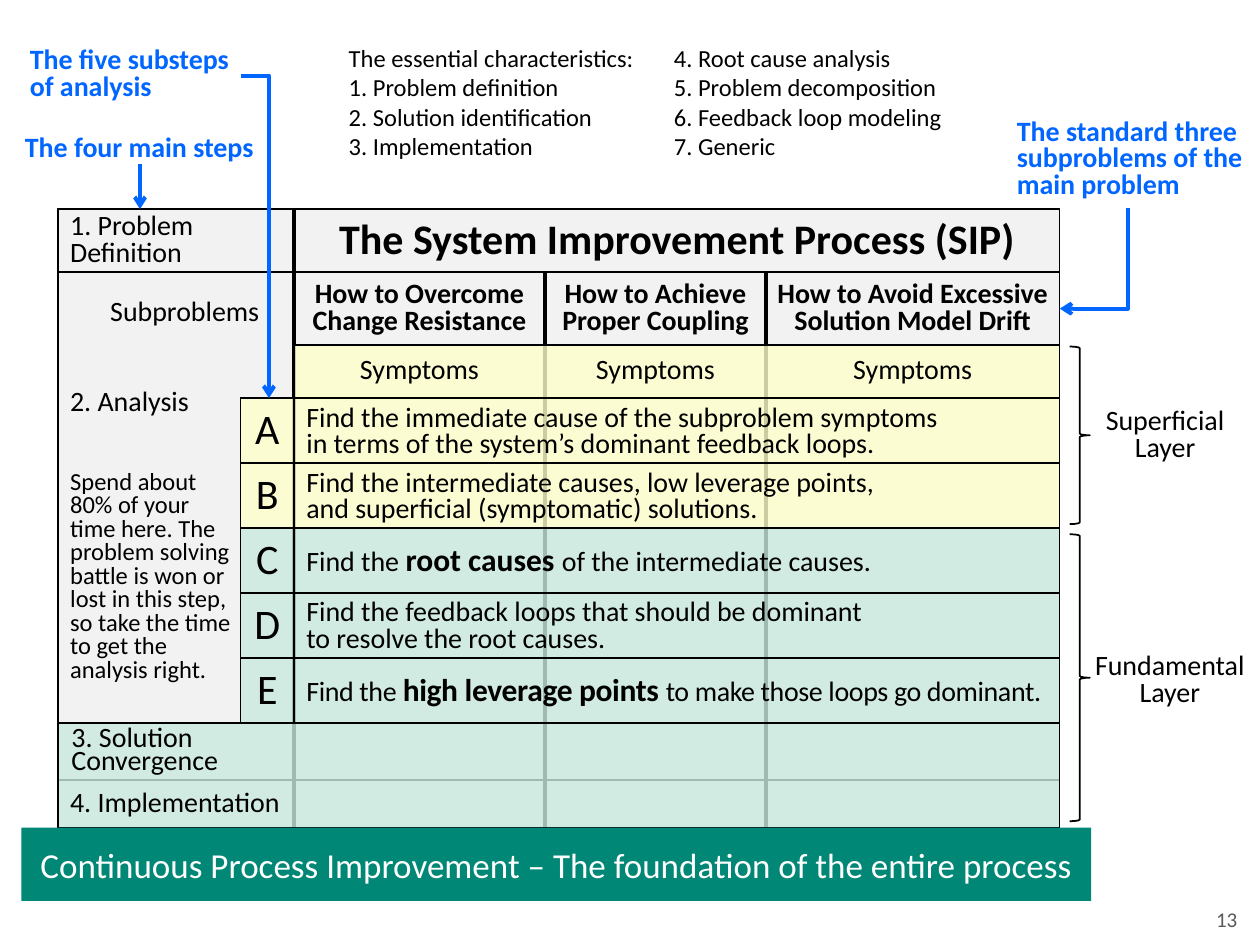
from dataclasses import dataclass

from lxml import etree
from pptx import Presentation
from pptx.dml.color import RGBColor
from pptx.enum.shapes import MSO_CONNECTOR, MSO_SHAPE
from pptx.enum.text import MSO_ANCHOR, MSO_AUTO_SIZE, PP_ALIGN
from pptx.oxml.ns import qn
from pptx.util import Pt

FONT = "Calibri"
BLACK, BLUE, WHITE = "000000", "0066FF", "FFFFFF"
GREY, GREEN, YELLOW, TEAL = "F2F2F2", "C9E9DE", "FFFFCC", "008776"
LEFT, MIDDLE, RIGHT = PP_ALIGN.LEFT, PP_ALIGN.CENTER, PP_ALIGN.RIGHT

# Grid of the process table
X0, X_STEP, X1, X_END = 33, 137.5, 168, 605.5
Y0, Y_HEAD, Y_SYMPTOM, Y_STEP, Y_SOLUTION, Y_IMPLEMENT, Y_END = (
    119.5, 155.5, 197.3, 227.5, 413, 445.7, 473)
STEP_H = (Y_SOLUTION - Y_STEP) / 5
Y_FUNDAMENTAL = Y_STEP + 2 * STEP_H

LABEL_INSETS = (7.2, 3.6, 0, 3.6)
STEP_INSETS = (7.2, 3.6, 3.6, 1.4)


@dataclass
class Box:
    left: float
    top: float
    width: float
    height: float

    def lengths(self):
        return [Pt(v) for v in (self.left, self.top, self.width, self.height)]


@dataclass
class Column:
    left: float
    right: float
    heading: str


@dataclass
class Step:
    letter: str
    text: str
    spc: float = 0


@dataclass
class Note:
    text: str
    box: Box
    size: float = 16
    align: PP_ALIGN = LEFT
    spacing: float = 0.8
    color: str = BLACK
    bold: bool = False
    insets: tuple = LABEL_INSETS
    anchor: MSO_ANCHOR = MSO_ANCHOR.MIDDLE


@dataclass
class Layer:
    text: str
    box: Box
    brace: Box


COLUMNS = [
    Column(X1, 311.5, "How to Overcome\vChange Resistance"),
    Column(311.5, 437.7, "How to Achieve\vProper Coupling"),
    Column(437.7, X_END, "How to Avoid Excessive\vSolution Model Drift"),
]
# **...** marks the larger bold words
STEPS = [
    Step("A", "Find the immediate cause of the subproblem symptoms\n"
              "in terms of the system’s dominant feedback loops."),
    Step("B", "Find the intermediate causes, low leverage points,\v"
              "and superficial (symptomatic) solutions."),
    Step("C", "Find the **root causes **of the intermediate causes."),
    Step("D", "Find the feedback loops that should be dominant\vto resolve the root causes."),
    Step("E", "Find the **high leverage points **to make those loops go dominant.", -0.2),
]
LAYERS = [
    Layer("Superficial\vLayer", Box(623.5, 230.4, 84.5, 38.5), Box(611.3, 198, 11.5, 101.5)),
    Layer("Fundamental\vLayer", Box(617, 370, 103, 37.5), Box(611.3, 305.3, 11.5, 164)),
]
TOP = MSO_ANCHOR.TOP
NOTES = [
    Note("2. Analysis", Box(X0, 215.3, 134.6, 30.2)),
    Note("Spend about 80% of your time here. The problem solving battle is won or lost "
         "in this step, so take the time to get the analysis right.",
         Box(X0, 264.2, 104.4, 131), size=14),
    Note("Subproblems", Box(X0, 161.3, 115.2, 36), align=RIGHT),
    Note("3. Solution\vConvergence", Box(33.8, 413.3, 134.6, 29.5), spacing=0.7,
         insets=(7.2, 3.6, 0, 0)),
    Note("4. Implementation", Box(X0, Y_IMPLEMENT, 134.6, 27.4)),
    Note("The standard three\vsubproblems of the\vmain problem", Box(574, 64.8, 143, 54),
         color=BLUE, bold=True, anchor=TOP),
    Note("The four main steps", Box(5.8, 77.8, 147.6, 15.8), align=MIDDLE,
         color=BLUE, bold=True, insets=(7.2, 0, 7.2, 0), anchor=TOP),
    Note("The five substeps of analysis", Box(10, 23.8, 127.5, 38),
         color=BLUE, bold=True, anchor=TOP),
    Note("The essential characteristics:\n1. Problem definition\n"
         "2. Solution identification\n3. Implementation",
         Box(192.2, 20.9, 185.8, 75), size=14, spacing=1, anchor=TOP),
    Note("4. Root cause analysis\n5. Problem decomposition\n"
         "6. Feedback loop modeling\n7. Generic",
         Box(378, 20.9, 185.8, 75), size=14, spacing=1, anchor=TOP),
    Note("13", Box(678.2, 513.4, 36, 23.8), size=12, align=RIGHT, spacing=1,
         color="595959", insets=(7.2, 3.6, 7.2, 3.6)),
]


def rgb(color: str) -> RGBColor:
    return RGBColor.from_string(color)


def put_text(sp, text: str, *, size=16, color=BLACK, bold=False, align=LEFT, spacing=0.8,
             anchor=MSO_ANCHOR.MIDDLE, insets=(7.2, 3.6, 7.2, 3.6), spc=0):
    """Fill sp: \\n starts a paragraph, \\v breaks a line, ** toggles emphasis."""
    tf = sp.text_frame
    tf.word_wrap = True
    tf.auto_size = MSO_AUTO_SIZE.NONE
    tf.vertical_anchor = anchor
    tf.margin_left, tf.margin_top, tf.margin_right, tf.margin_bottom = map(Pt, insets)
    for i, paragraph in enumerate(text.split("\n")):
        p = tf.add_paragraph() if i else tf.paragraphs[0]
        p.alignment, p.line_spacing = align, spacing
        for j, part in enumerate(paragraph.split("**")):
            strong = j % 2 == 1
            for k, line in enumerate(part.split("\v")):
                if k:
                    p.add_line_break()
                r = p.add_run()
                r.text = line
                r.font.name, r.font.size = FONT, Pt(size + 2 * strong)
                r.font.bold = bold or strong
                r.font.color.rgb = rgb(color)
                if spc:
                    r.font._element.set("spc", str(round(spc * 100)))


def add_box(s, box: Box, fill=None, opacity=100, line=BLACK, kind=MSO_SHAPE.RECTANGLE):
    sp = s.shapes.add_shape(kind, *box.lengths())
    sp.shadow.inherit = False
    if fill:
        sp.fill.solid()
        sp.fill.fore_color.rgb = rgb(fill)
        if opacity < 100:
            clr = sp._element.spPr.find(qn("a:solidFill"))[0]
            etree.SubElement(clr, qn("a:alpha")).set("val", str(opacity * 1000))
    else:
        sp.fill.background()
    if line:
        sp.line.color.rgb = rgb(line)
        sp.line.width = Pt(1)
    else:
        sp.line.fill.background()
    return sp


def add_line(s, x1, y1, x2, y2, width=1.0, color=BLACK, arrow=False, bent=False, rotation=0):
    kind = MSO_CONNECTOR.ELBOW if bent else MSO_CONNECTOR.STRAIGHT
    c = s.shapes.add_connector(kind, Pt(x1), Pt(y1), Pt(x2), Pt(y2))
    c.line.color.rgb = rgb(color)
    c.line.width = Pt(width)
    spPr = c._element.spPr
    if bent:
        spPr.find(qn("a:prstGeom")).set("prst", "bentConnector2")
    if rotation:
        spPr.find(qn("a:xfrm")).set("rot", str(rotation * 60000))
    if arrow:
        etree.SubElement(spPr.find(qn("a:ln")), qn("a:tailEnd")).set("type", "arrow")
    etree.SubElement(spPr, qn("a:effectLst"))


def add_note(s, note: Note):
    sp = s.shapes.add_textbox(*note.box.lengths())
    put_text(sp, note.text, size=note.size, color=note.color, bold=note.bold, align=note.align,
             spacing=note.spacing, anchor=note.anchor, insets=note.insets)


def add_title(s):
    sp = s.shapes.title
    s.shapes._spTree.append(sp._element)  # bring in front of the table panel
    sp.left, sp.top, sp.width, sp.height = Box(X1, Y0, X_END - X1, Y_HEAD - Y0).lengths()
    sp.line.color.rgb = rgb(BLACK)
    sp.line.width = Pt(1)
    put_text(sp, "The System Improvement Process (SIP)", size=24, bold=True, align=MIDDLE,
             insets=(7.2, 3.6, 7.2, 1.4))


def add_table_grid(s):
    add_box(s, Box(X0, Y0, X_END - X0, Y_END - Y0), GREY)
    add_title(s)
    for col in COLUMNS:
        add_line(s, col.left, Y0 if col.left == X1 else Y_HEAD, col.left, Y_END, 2.25)
    for x, y in ((X1, Y_SYMPTOM), (X0, Y_SOLUTION), (X0, Y_IMPLEMENT)):
        add_line(s, x, y, X_END, y)
    sp = add_box(s, Box(X0, Y0, X1 - X0, Y_HEAD - Y0))
    put_text(sp, "1. Problem Definition", insets=LABEL_INSETS)
    for left, top, bottom, fill in ((X0, Y_SOLUTION, Y_END, GREEN),
                                    (X_STEP, Y_FUNDAMENTAL, Y_SOLUTION, GREEN),
                                    (X1, Y_SYMPTOM, Y_STEP, YELLOW),
                                    (X_STEP, Y_STEP, Y_FUNDAMENTAL, YELLOW)):
        add_box(s, Box(left, top, X_END - left, bottom - top), fill, opacity=80)


def add_column(s, col: Column):
    width = col.right - col.left
    for text, top, bottom, bold in ((col.heading, Y_HEAD, Y_SYMPTOM, True),
                                    ("Symptoms", Y_SYMPTOM, Y_STEP, False)):
        add_note(s, Note(text, Box(col.left, top, width, bottom - top), align=MIDDLE,
                         bold=bold, insets=(3.6,) * 4))


def add_step(s, step: Step, top: float):
    sp = add_box(s, Box(X1, top, X_END - X1, STEP_H))
    put_text(sp, step.text, insets=STEP_INSETS, spc=step.spc)
    sp = add_box(s, Box(X_STEP, top, X1 - X_STEP, STEP_H))
    put_text(sp, step.letter, size=24, align=MIDDLE, insets=(0, 3.6, 0, 1.4))


def main():
    prs = Presentation()
    prs.slide_width, prs.slide_height = Pt(720), Pt(540)
    s = prs.slides.add_slide(prs.slide_layouts[5])
    add_table_grid(s)
    for col in COLUMNS:
        add_column(s, col)
    for i, step in enumerate(STEPS):
        add_step(s, step, Y_STEP + i * STEP_H)
    for layer in LAYERS:
        add_note(s, Note(layer.text, layer.box, align=MIDDLE, insets=(7.2, 3.6, 7.2, 3.6),
                         anchor=TOP))
        add_box(s, layer.brace, kind=MSO_SHAPE.RIGHT_BRACE)
    sp = add_box(s, Box(12.2, Y_END, 611.3, 41.8), TEAL, line=None)
    put_text(sp, "Continuous Process Improvement – The foundation of the entire process",
             size=20, color=WHITE, align=MIDDLE, spacing=1)
    for note in NOTES:
        add_note(s, note)
    blue = dict(width=2.25, color=BLUE, arrow=True)
    add_line(s, 80, 93.6, 80, Y0, **blue)
    add_line(s, X_STEP, 43.2, 153.7, Y_STEP, bent=True, **blue)
    add_line(s, 596.2, 128.2, 653.8, 167, bent=True, rotation=90, **blue)
    prs.save("out.pptx")


if __name__ == "__main__":
    main()
